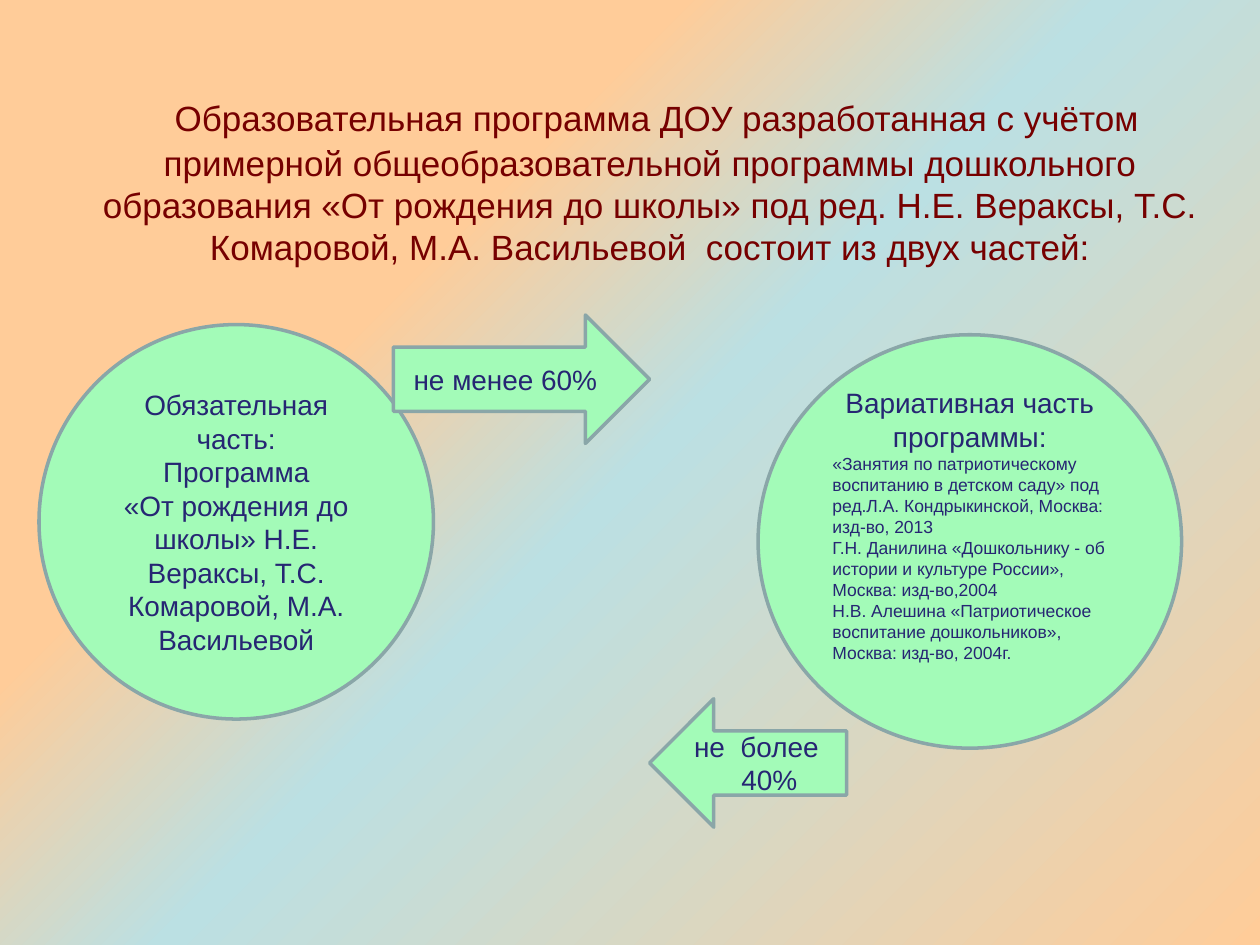
from copy import deepcopy

from pptx import Presentation
from pptx.dml.color import RGBColor
from pptx.enum.shapes import MSO_SHAPE
from pptx.enum.text import MSO_ANCHOR, PP_ALIGN
from pptx.util import Pt

PEACH = RGBColor(0xFF, 0xCC, 0x99)
SKY = RGBColor(0xBB, 0xE0, 0xE3)
MINT = RGBColor(0xA3, 0xFB, 0xB8)
GREY = RGBColor(0x8A, 0xA6, 0xA8)
NAVY = RGBColor(0x26, 0x26, 0x73)
MAROON = RGBColor(0x76, 0x00, 0x00)


def style_text(paragraph, size, color, align):
    paragraph.alignment = align
    for run in paragraph.runs:
        run.font.name = "Arial"
        run.font.size = Pt(size)
        run.font.color.rgb = color


def add_block(preset, left, top, width, height, lines):
    block = slide.shapes.add_shape(preset, Pt(left), Pt(top), Pt(width), Pt(height))
    block.shadow.inherit = False
    block.fill.solid()
    block.fill.fore_color.rgb = MINT
    block.line.color.rgb = GREY
    block.line.width = Pt(2)
    frame = block.text_frame
    frame.word_wrap = True
    frame.vertical_anchor = MSO_ANCHOR.MIDDLE
    frame.text = "\n".join(text for text, size, align in lines)
    for paragraph, (text, size, align) in zip(frame.paragraphs, lines):
        style_text(paragraph, size, NAVY, align)
    return block


prs = Presentation()
prs.slide_width, prs.slide_height = Pt(720), Pt(540)
slide = prs.slides.add_slide(prs.slide_layouts[6])

# Diagonal background gradient with three stops
background = slide.background.fill
background.gradient()
background.gradient_angle = 315
stop_list = background.gradient_stops[0]._gs.getparent()
stop_list.append(deepcopy(stop_list[-1]))
for stop, (position, color) in zip(
    background.gradient_stops, [(0.31, PEACH), (0.5, SKY), (1, PEACH)]
):
    stop.position = position
    stop.color.rgb = color

# Title; the larger leading space sets the height of the first line
title = slide.shapes.add_textbox(Pt(47.5), Pt(0), Pt(648), Pt(140.4)).text_frame
title.word_wrap = True
title.margin_top = Pt(47)
heading = title.paragraphs[0]
heading.add_run().text = " "
heading.add_run().text = (
    "Образовательная программа ДОУ разработанная с учётом примерной "
    "общеобразовательной программы дошкольного образования «От рождения до школы» "
    "под ред. Н.Е. Вераксы, Т.С. Комаровой, М.А. Васильевой  состоит из двух частей:"
)
style_text(heading, 20, MAROON, PP_ALIGN.CENTER)
heading.runs[0].font.size = Pt(28)

# Circles with the two parts of the programme
add_block(MSO_SHAPE.OVAL, 22.3, 185.5, 225.4, 225.4, [
    ("Обязательная часть:", 16, PP_ALIGN.CENTER),
    ("Программа", 16, PP_ALIGN.CENTER),
    ("«От рождения до школы» Н.Е. Вераксы, Т.С. Комаровой, М.А. Васильевой",
     16, PP_ALIGN.CENTER),
])
variable_part = add_block(MSO_SHAPE.OVAL, 433.2, 191.3, 242, 236.2, [
    ("Вариативная часть программы:", 16, PP_ALIGN.CENTER),
    ("«Занятия по патриотическому воспитанию в детском саду» под "
     "ред.Л.А. Кондрыкинской, Москва: изд-во, 2013", 10, PP_ALIGN.LEFT),
    ("Г.Н. Данилина «Дошкольнику - об истории и культуре России», "
     "Москва: изд-во,2004", 10, PP_ALIGN.LEFT),
    ("Н.В. Алешина «Патриотическое воспитание дошкольников», "
     "Москва: изд-во, 2004г.", 10, PP_ALIGN.LEFT),
])
variable_part.text_frame.margin_bottom = Pt(23)

# Arrows with the shares
add_block(MSO_SHAPE.RIGHT_ARROW, 224.8, 180, 146.4, 73.4,
          [("не менее 60%", 16, PP_ALIGN.CENTER)])
variable_share = add_block(MSO_SHAPE.LEFT_ARROW, 371.2, 399.3, 112.6, 73.4,
                           [("не  более 40%", 16, PP_ALIGN.LEFT)])
hanging = variable_share.text_frame.paragraphs[0]._p.get_or_add_pPr()
hanging.set("marL", str(Pt(27)))
hanging.set("indent", str(-Pt(27)))

prs.save("out.pptx")
